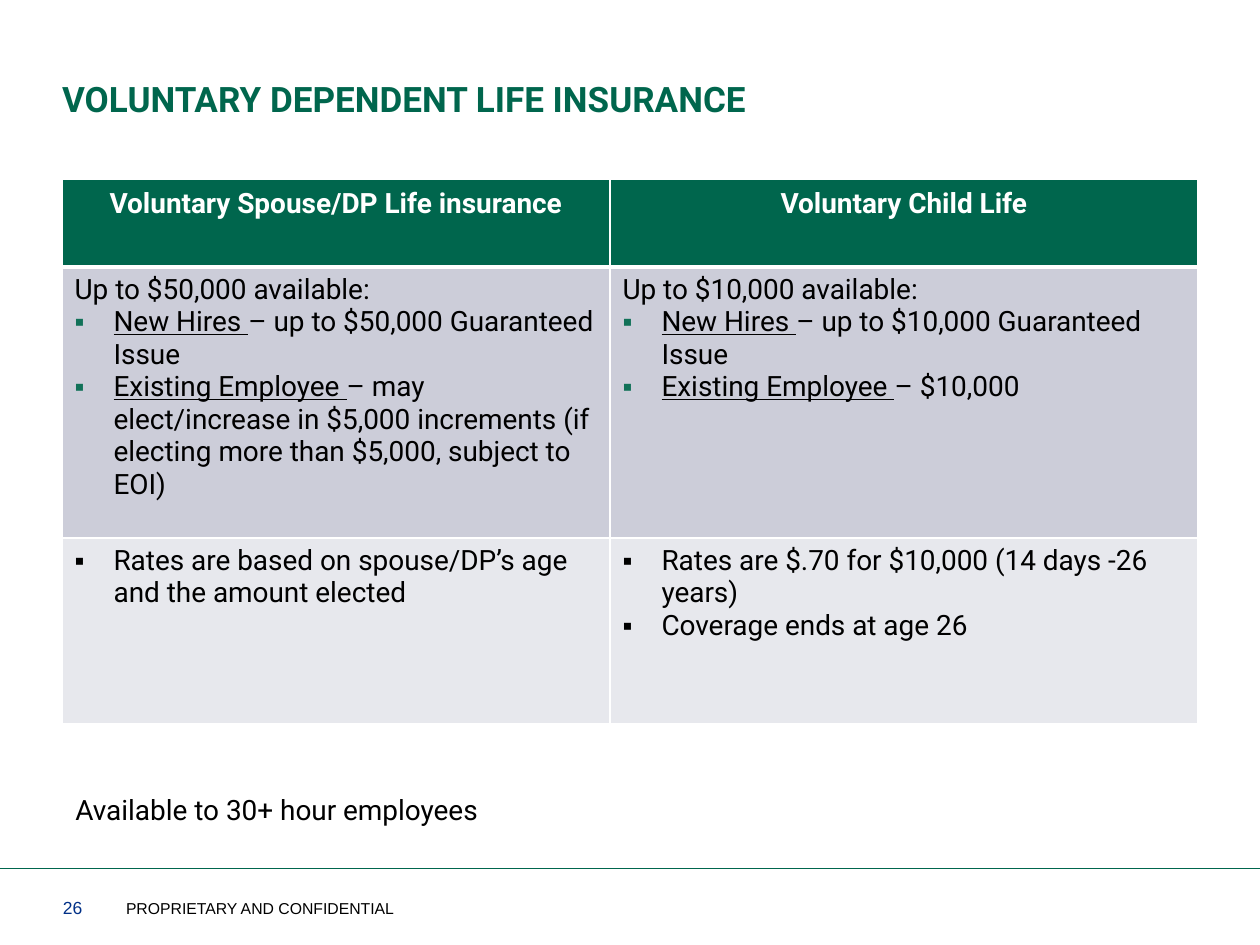
from lxml.etree import SubElement
from pptx import Presentation
from pptx.dml.color import RGBColor
from pptx.enum.shapes import MSO_CONNECTOR
from pptx.enum.text import MSO_ANCHOR, PP_ALIGN
from pptx.oxml import parse_xml
from pptx.oxml.ns import nsdecls, qn
from pptx.util import Pt

GREEN, MINT, BLUE, BLACK, WHITE = "00664D", "117158", "003087", "000000", "FFFFFF"
HEADS = ["Voluntary Spouse/DP Life insurance", "Voluntary Child Life"]
# A cell is (lead line, bullet colour, bullets); a bullet is (underlined, plain).
LIMITS = [
    ("Up to $50,000 available:", MINT, [
        ("New Hires ", "– up to $50,000 Guaranteed Issue"),
        ("Existing Employee ", "– may elect/increase in $5,000 increments "
         "(if electing more than $5,000, subject to EOI)")]),
    ("Up to $10,000 available:", MINT, [
        ("New Hires ", "– up to $10,000 Guaranteed Issue"),
        ("Existing Employee ", "– $10,000")]),
]
RATES = [
    ("", BLACK, [("", "Rates are based on spouse/DP’s age and the amount elected")]),
    ("", BLACK, [("", "Rates are $.70 for $10,000 (14 days -26 years)"),
                 ("", "Coverage ends at age 26")]),
]
COLS, ROWS = [548, 588], [88, 271, 186]
FILLS = [GREEN, "CCCDD9", "E7E8ED"]
BODY = {"name": "Roboto", "size": Pt(16)}
INSETS = {"margin_left": 0, "margin_right": 0}
# Text, box, font values, colour, frame values
NOTES = [
    ("26", (63, 892, 60, 32), {"name": "Arial", "size": Pt(10)}, BLUE,
     {**INSETS, "vertical_anchor": MSO_ANCHOR.BOTTOM}),
    ("PROPRIETARY AND CONFIDENTIAL", (126, 892, 296, 32),
     {"name": "Arial", "size": Pt(9)}, BLACK,
     {**INSETS, "vertical_anchor": MSO_ANCHOR.BOTTOM}),
    ("Available to 30+ hour employees", (63, 786, 515, 47), BODY, BLACK, {}),
]


def px(num):
    return round(num * 914400 / 126)


def rgb(code):
    return RGBColor.from_string(code)


def put(item, vals):
    for key, val in vals.items():
        setattr(item, key, val)


def place(shape, box):
    put(shape, dict(zip(("left", "top", "width", "height"), map(px, box))))


def write(para, text, vals, color):
    run = para.add_run()
    run.text = text
    put(run.font, vals)
    run.font.color.rgb = rgb(color)


def bullet(para, color):
    props = para._p.get_or_add_pPr()
    props.set("marL", str(px(39)))
    props.set("indent", str(-px(39)))
    tint = SubElement(props, qn("a:buClr"))
    SubElement(tint, qn("a:srgbClr"), val=color)
    SubElement(props, qn("a:buFont"), typeface="Arial")
    SubElement(props, qn("a:buChar"), char="▪")


def edge(cell, base):
    """Draw white borders, with the given width in points below."""
    props = cell._tc.get_or_add_tcPr()
    for spot, (side, wide) in enumerate(zip("LRTB", (1, 1, 1, base))):
        props.insert(spot, parse_xml(
            f'<a:ln{side} {nsdecls("a")} w="{Pt(wide)}"><a:solidFill>'
            f'<a:srgbClr val="{WHITE}"/></a:solidFill></a:ln{side}>'))


def fill_head(cell, text):
    para = cell.text_frame.paragraphs[0]
    put(para, {"alignment": PP_ALIGN.CENTER, "line_spacing": 1.07})
    write(para, text, {**BODY, "bold": True}, WHITE)


def fill_body(cell, entry):
    lead, color, points = entry
    frame = cell.text_frame
    para = frame.paragraphs[0]
    if lead:
        write(para, lead, BODY, BLACK)
    for num, (term, rest) in enumerate(points):
        if lead or num:
            para = frame.add_paragraph()
        bullet(para, color)
        if term:
            write(para, term, {**BODY, "underline": True}, BLACK)
        write(para, rest, BODY, BLACK)


def add_plan(slide):
    box = map(px, (62, 179, sum(COLS), sum(ROWS)))
    table = slide.shapes.add_table(len(ROWS), len(COLS), *box).table
    for col, wide in zip(table.columns, COLS):
        col.width = px(wide)
    for y, (row, entries) in enumerate(zip(table.rows, (HEADS, LIMITS, RATES))):
        row.height = px(ROWS[y])
        for cell, entry in zip(row.cells, entries):
            cell.fill.solid()
            cell.fill.fore_color.rgb = rgb(FILLS[y])
            edge(cell, 1 if y else 3)
            if y:
                fill_body(cell, entry)
            else:
                fill_head(cell, entry)
    for cell in table.rows[1].cells:
        edge_top = cell._tc.tcPr.find(qn("a:lnT"))
        edge_top.set("w", str(Pt(3)))


def main():
    deck = Presentation()
    put(deck, {"slide_width": px(1260), "slide_height": px(945)})
    slide = deck.slides.add_slide(deck.slide_layouts[5])

    rule = slide.shapes.add_connector(
        MSO_CONNECTOR.STRAIGHT, 0, px(868), px(1260), px(868))
    rule.line.width = Pt(0.5)
    rule.line.color.rgb = rgb(GREEN)
    SubElement(rule._element.spPr, qn("a:effectLst"))

    title = slide.shapes.title
    place(title, (62, 71, 1124, 136))
    put(title.text_frame, {**INSETS, "vertical_anchor": MSO_ANCHOR.TOP})
    para = title.text_frame.paragraphs[0]
    para.alignment = PP_ALIGN.LEFT
    write(para, "VOLUNTARY DEPENDENT LIFE INSURANCE",
          {"name": "Roboto", "size": Pt(20), "bold": True}, GREEN)

    add_plan(slide)
    for text, box, font, color, vals in NOTES:
        note = slide.shapes.add_textbox(*map(px, box))
        put(note.text_frame, {"word_wrap": True, **vals})
        write(note.text_frame.paragraphs[0], text, font, color)
    deck.save("out.pptx")


if __name__ == "__main__":
    main()
